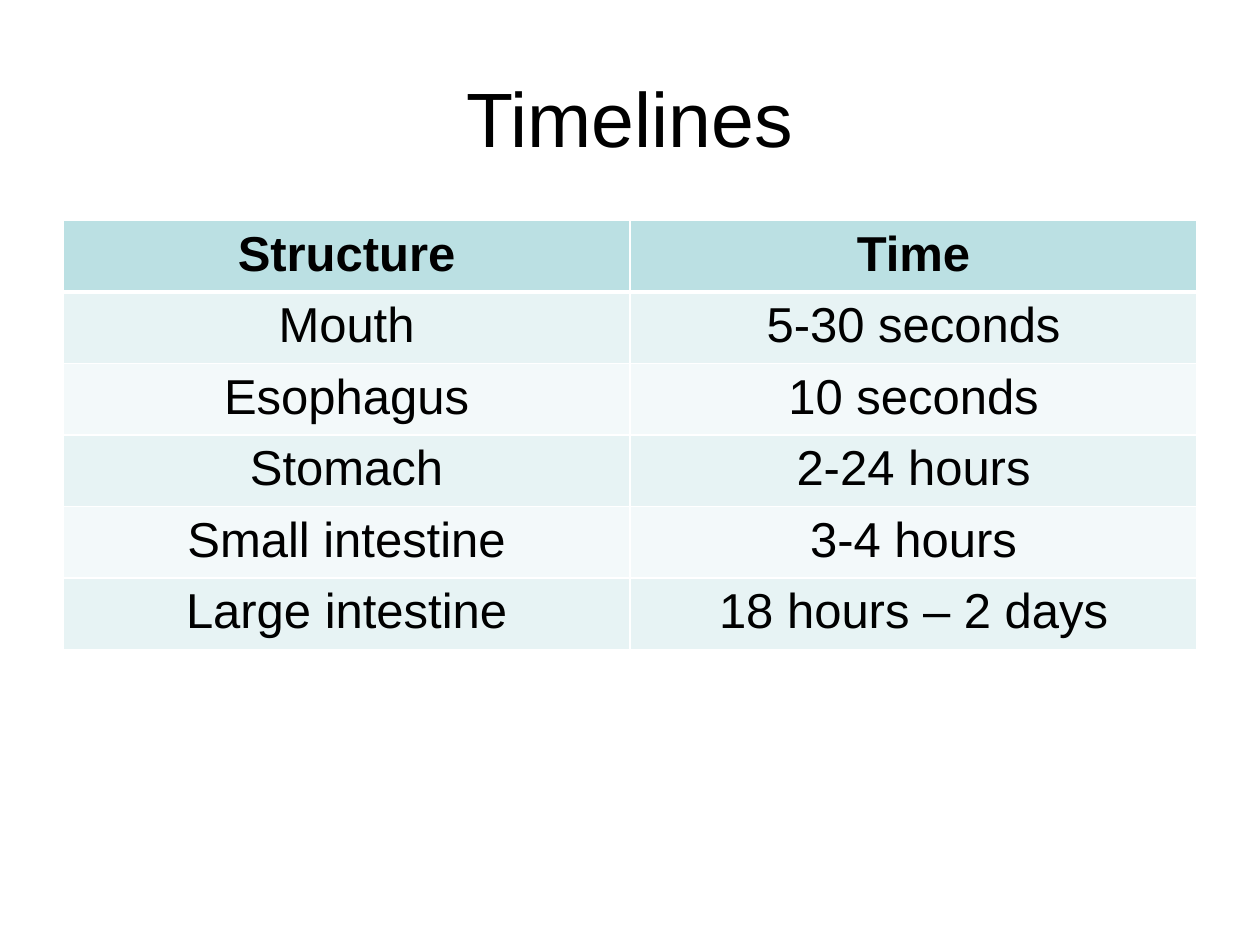
"""Build a slide with a table of digestion times for each structure."""
from lxml import etree
from pptx import Presentation, util as u
from pptx.dml.color import RGBColor
from pptx.enum import text
from pptx.oxml.ns import qn

HUES = {"ink": "000000", "line": "FFFFFF", "head": "BBE0E3",
        "odd": "E7F3F4", "even": "F3F9FA"}
ROWS = [
    ("Structure", "Time"),
    ("Mouth", "5-30 seconds"),
    ("Esophagus", "10 seconds"),
    ("Stomach", "2-24 hours"),
    ("Small intestine", "3-4 hours"),
    ("Large intestine", "18 hours – 2 days"),
]


def style(para, size, bold=False):
    para.alignment = text.PP_ALIGN.CENTER
    for run in para.runs:
        font = run.font
        font.name, font.size, font.bold = "Arial", u.Pt(size), bold
        font.color.rgb = RGBColor.from_string(HUES["ink"])


def edge(cell, side, width):
    line = etree.SubElement(cell._tc.get_or_add_tcPr(), qn(f"a:ln{side}"), w=str(u.Pt(width)))
    fill = etree.SubElement(line, qn("a:solidFill"))
    etree.SubElement(fill, qn("a:srgbClr"), val=HUES["line"])


deck = Presentation()
deck.slide_width, deck.slide_height = u.Inches(10), u.Inches(7.5)
wide, high = deck.slide_width, deck.slide_height
slide = deck.slides.add_slide(deck.slide_layouts[6])
left, span = int(wide * 0.05), int(wide * 0.9)

title = slide.shapes.add_textbox(left, int(high * 0.04), span, u.Inches(1.25))
frame = title.text_frame
frame.word_wrap = True
frame.vertical_anchor = text.MSO_ANCHOR.MIDDLE
frame.text = "Timelines"
style(frame.paragraphs[0], 44)

step = u.Inches(3.4) // len(ROWS)
table = slide.shapes.add_table(len(ROWS), 2, left, u.Inches(1.75), span, step * len(ROWS)).table
for r, row in enumerate(ROWS):
    table.rows[r].height = step
    tone = "head" if r == 0 else "odd" if r % 2 else "even"
    for c, word in enumerate(row):
        cell = table.cell(r, c)
        cell.text_frame.text = word
        style(cell.text_frame.paragraphs[0], 28, r == 0)
        for side, width in zip("LRTB", (1, 1, 3 if r == 1 else 1, 3 if r == 0 else 1)):
            edge(cell, side, width)
        cell.fill.solid()
        cell.fill.fore_color.rgb = RGBColor.from_string(HUES[tone])

deck.save("out.pptx")
